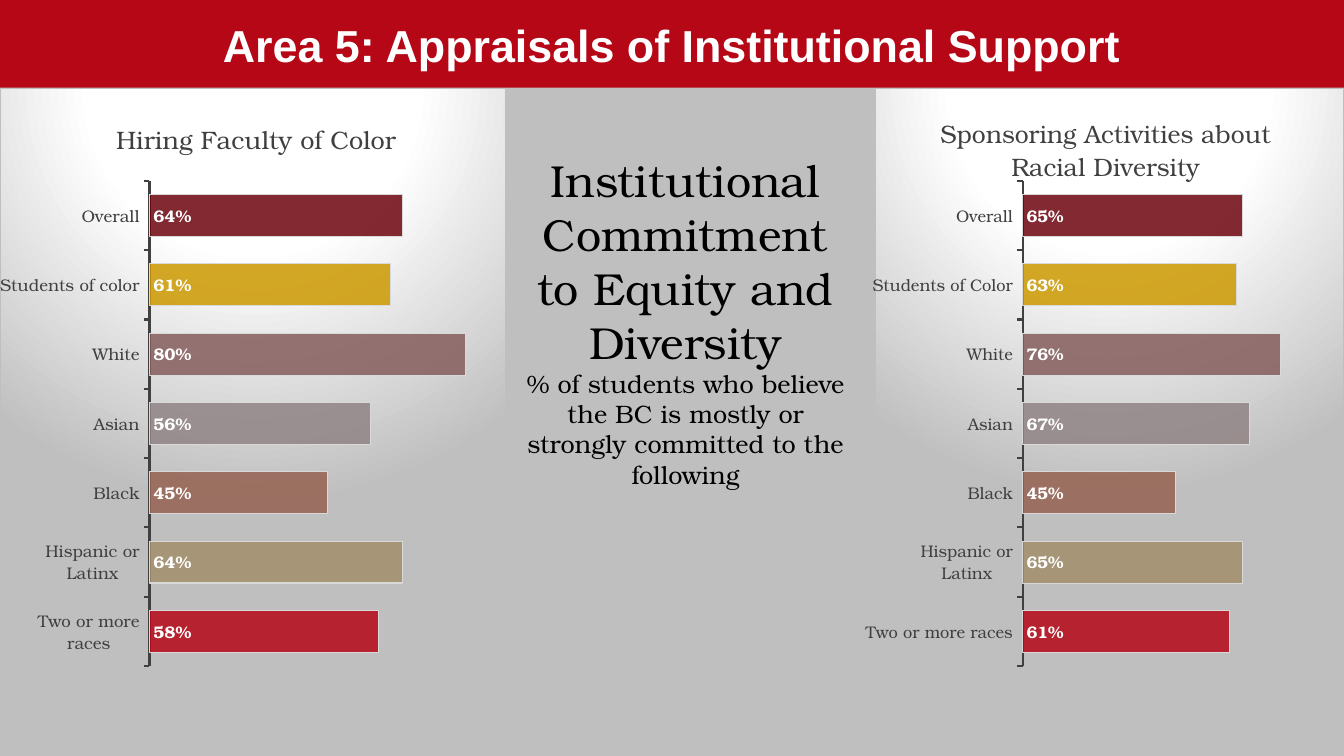
from lxml import etree
from pptx import Presentation
from pptx.chart.data import CategoryChartData
from pptx.dml.color import RGBColor
from pptx.enum.chart import XL_CHART_TYPE, XL_LABEL_POSITION, XL_TICK_MARK
from pptx.enum.shapes import MSO_SHAPE
from pptx.enum.text import MSO_ANCHOR, PP_ALIGN
from pptx.oxml import parse_xml
from pptx.oxml.ns import nsdecls, qn
from pptx.util import Inches, Pt

BAR = XL_CHART_TYPE.BAR_CLUSTERED
INSIDE_BASE = XL_LABEL_POSITION.INSIDE_BASE
TICK_OUT = XL_TICK_MARK.OUTSIDE
RECTANGLE = MSO_SHAPE.RECTANGLE
MIDDLE = MSO_ANCHOR.MIDDLE
CENTER = PP_ALIGN.CENTER

WHITE = RGBColor(0xFF, 0xFF, 0xFF)
BLACK = RGBColor(0, 0, 0)
GRAY = RGBColor(0xBF, 0xBF, 0xBF)
PALE = RGBColor(0xD9, 0xD9, 0xD9)
DARK = RGBColor(0x40, 0x40, 0x40)
RED = RGBColor(0xB6, 0x07, 0x17)
BAR_COLORS = [RED, RGBColor(0xA2, 0x8E, 0x6A), RGBColor(0x95, 0x62, 0x51),
              RGBColor(0x91, 0x84, 0x85), RGBColor(0x85, 0x5D, 0x5D),
              RGBColor(0xCC, 0x99, 0x00), RGBColor(0x6D, 0x04, 0x0E)]
SERIF = "TeX Gyre Bonum"

# Content
HEADING = "Area 5: Appraisals of Institutional Support"
CENTER_TEXT = [
    ("Institutional Commitment to Equity and Diversity", 32),
    ("% of students who believe the BC is mostly or strongly committed "
     "to the following", 18),
]
GROUPS = ["Two or more races", "Hispanic or Latinx", "Black", "Asian", "White"]
# Plot and title places are shares of each chart
CHARTS = [
    {"title": "Hiring Faculty of Color", "title_at": (0.22, 0.04),
     "groups": GROUPS + ["Students of color", "Overall"],
     "values": [0.58, 0.64, 0.45, 0.56, 0.8, 0.61, 0.64],
     "left": 0, "width": 5.02, "plot": (0.295, 0.139, 0.704, 0.727), "top_value": 0.9},
    {"title": "Sponsoring Activities about Racial Diversity", "title_at": (0.13, 0.03),
     "groups": GROUPS + ["Students of Color", "Overall"],
     "values": [0.61, 0.65, 0.45, 0.67, 0.76, 0.63, 0.65],
     "left": 8.58, "width": 4.75, "plot": (0.315, 0.139, 0.579, 0.727), "top_value": 0.8},
]
WIDTH, HEIGHT, BANNER_BOTTOM = 13.33, 7.5, 0.87


def style(font, size, color, name=SERIF, bold=False):
    font.size, font.name, font.bold = Pt(size), name, bold
    font.color.rgb = color


def set_layout(parent, position, place, inner=False):
    """Give a chart part a manual layout."""
    for old in parent.findall(qn("c:layout")):
        parent.remove(old)
    layout = parse_xml(f"<c:layout {nsdecls('c')}><c:manualLayout/></c:layout>")
    modes = [("layoutTarget", "inner")] if inner else []
    modes += [("xMode", "edge"), ("yMode", "edge")]
    for tag, value in modes + list(zip("xywh", place)):
        etree.SubElement(layout[0], qn(f"c:{tag}")).set("val", str(value))
    parent.insert(position, layout)


def add_panel_fill(chart):
    """Radial white-to-gray background with a thin gray border."""
    stops = "".join(f'<a:gs pos="{share * 1000}"><a:srgbClr val="{color}"/></a:gs>'
                    for share, color in [(0, WHITE), (39, WHITE), (100, GRAY)])
    panel = parse_xml(
        f'<c:spPr {nsdecls("c", "a")}><a:gradFill><a:gsLst>{stops}</a:gsLst>'
        '<a:path path="circle"><a:fillToRect l="50000" t="-80000" r="50000" b="180000"/>'
        f'</a:path></a:gradFill><a:ln w="{Pt(0.75)}"><a:solidFill>'
        f'<a:srgbClr val="{GRAY}"/></a:solidFill></a:ln></c:spPr>')
    chart.element.find(qn("c:chart")).addnext(panel)


def add_bar_chart(page, info):
    data = CategoryChartData(number_format="0%")
    data.categories = info["groups"]
    data.add_series("Series 1", info["values"])
    chart = page.shapes.add_chart(
        BAR, Inches(info["left"]), Inches(BANNER_BOTTOM), Inches(info["width"]),
        Inches(HEIGHT - BANNER_BOTTOM), data).chart
    style(chart.font, 10, BLACK)
    chart.has_legend = False
    add_panel_fill(chart)

    # Title
    chart.has_title = True
    para = chart.chart_title.text_frame.paragraphs[0]
    para.text = info["title"]
    style(para.font, 18, DARK)
    set_layout(chart.element.find(".//" + qn("c:title")), 1, info["title_at"])
    set_layout(chart.element.find(".//" + qn("c:plotArea")), 0, info["plot"], inner=True)

    # Axes
    groups, scale = chart.category_axis, chart.value_axis
    groups.major_tick_mark = TICK_OUT
    groups.has_major_gridlines = False
    groups.format.line.color.rgb = DARK
    groups.format.line.width = Pt(1.5)
    style(groups.tick_labels.font, 12, DARK)
    scale.minimum_scale, scale.maximum_scale = 0, info["top_value"]
    scale.has_major_gridlines = False
    scale.visible = False

    # Bars and their labels
    plot = chart.plots[0]
    plot.gap_width = 65
    plot.vary_by_categories = False
    for index, color in enumerate(BAR_COLORS):
        look = plot.series[0].points[index].format
        look.fill.solid()
        look.fill.fore_color.rgb = color
        look.line.color.rgb = PALE
        look.line.width = Pt(0.75)
    for bar in chart.element.iter(qn("c:dPt")):
        tint = bar.find(f"{qn('c:spPr')}/{qn('a:solidFill')}/{qn('a:srgbClr')}")
        etree.SubElement(tint, qn("a:alpha")).set("val", "85000")
    labels = plot.series[0].data_labels
    labels.show_value = True
    labels.position = INSIDE_BASE
    labels.number_format, labels.number_format_is_linked = "0%", False
    style(labels.font, 12, WHITE, bold=True)


def main():
    deck = Presentation()
    deck.slide_width, deck.slide_height = Inches(WIDTH), Inches(HEIGHT)
    page = deck.slides.add_slide(deck.slide_layouts[6])
    page.background.fill.solid()
    page.background.fill.fore_color.rgb = GRAY

    # Banner
    banner = page.shapes.add_shape(RECTANGLE, 0, Inches(-0.04), Inches(WIDTH), Inches(0.91))
    banner.shadow.inherit = False
    banner.fill.solid()
    banner.fill.fore_color.rgb = RED
    banner.line.fill.background()
    frame = banner.text_frame
    frame.word_wrap = True
    frame.vertical_anchor = MIDDLE
    frame.margin_top, frame.margin_bottom = Inches(0.07), Inches(0.01)
    para = frame.paragraphs[0]
    para.text, para.alignment = HEADING, CENTER
    style(para.font, 32, WHITE, "Arial", True)

    # Statement between the charts
    box = page.shapes.add_textbox(Inches(5.02), Inches(1.47), Inches(3.56), Inches(3.16))
    frame = box.text_frame
    frame.word_wrap = True
    for index, (text, size) in enumerate(CENTER_TEXT):
        para = frame.add_paragraph() if index else frame.paragraphs[0]
        para.text, para.alignment = text, CENTER
        style(para.font, size, BLACK)

    for info in CHARTS:
        add_bar_chart(page, info)
    deck.save("out.pptx")


if __name__ == "__main__":
    main()
